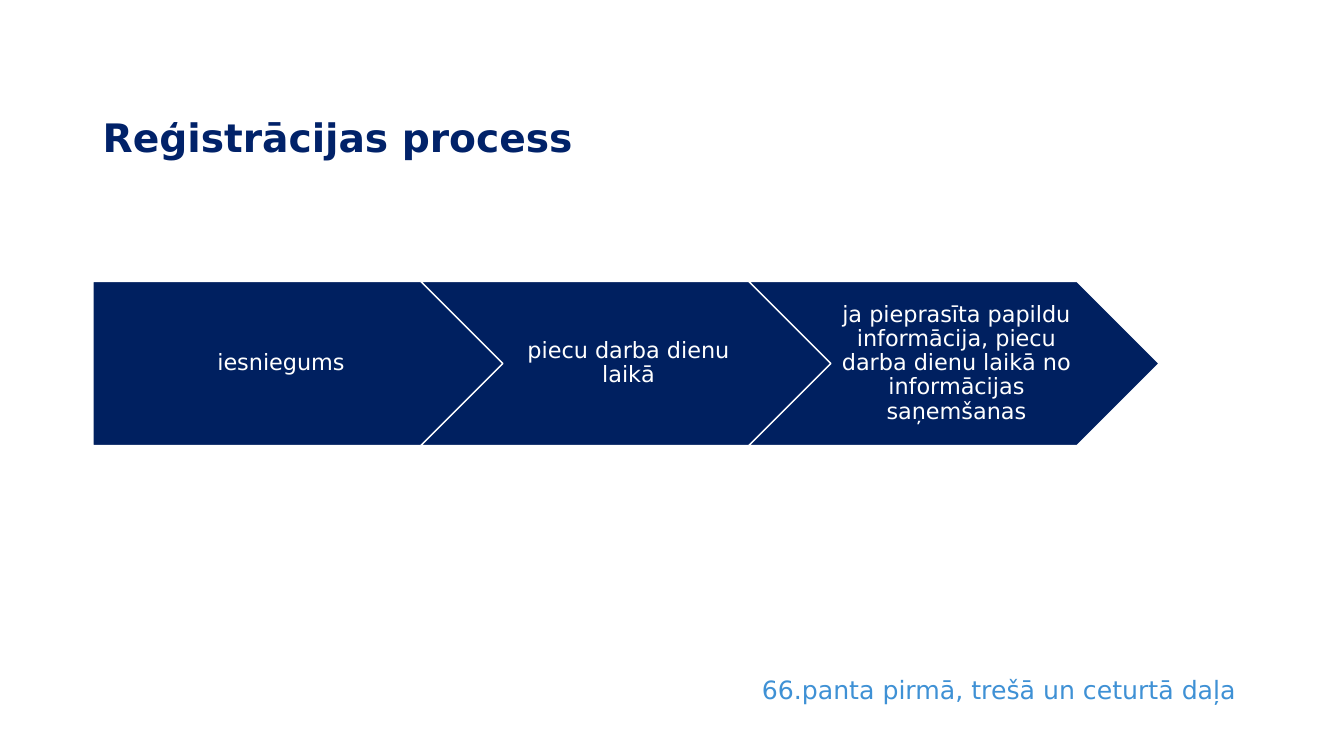
"""Build a slide with a three-step registration process."""
from pptx import Presentation
from pptx.dml.color import RGBColor as Rgb
from pptx.enum.shapes import MSO_SHAPE as Kind
from pptx.enum.text import MSO_ANCHOR as Anchor, PP_ALIGN as Align
from pptx.util import Cm, Pt

FONT = "DejaVu Sans"
COLORS = {"step": "002060", "edge": "FFFFFF", "title": "012269", "note": "3F91D5"}
STEPS = [
    "iesniegums",
    "piecu darba dienu laikā",
    "ja pieprasīta papildu informācija, piecu darba dienu laikā no informācijas saņemšanas",
]


def tint(name):
    return Rgb.from_string(COLORS[name])


def add_text(slide, box, text, size, color, bold=False, align=Align.LEFT,
             anchor=Anchor.MIDDLE, line=0.9, pads=(0.25, 0.25)):
    frame = slide.shapes.add_textbox(*map(Cm, box)).text_frame
    frame.word_wrap = True
    frame.vertical_anchor = anchor
    frame.margin_left, frame.margin_right = map(Cm, pads)
    para = frame.paragraphs[0]
    para.alignment = align
    para.line_spacing = line
    run = para.add_run()
    run.text = text
    font = run.font
    font.name, font.size, font.bold = FONT, Pt(size), bold
    font.color.rgb = tint(color)


def add_step(slide, box, text, first):
    left, top, width, height = box
    kind = Kind.PENTAGON if first else Kind.CHEVRON
    shape = slide.shapes.add_shape(kind, *map(Cm, box))
    shape.shadow.inherit = False
    shape.fill.solid()
    shape.fill.fore_color.rgb = tint("step")
    shape.line.color.rgb = tint("edge")
    shape.line.width = Pt(1)
    tip = height / 2
    if first:
        area, pad = (left, top, width - tip / 2, height), 0.23
    else:
        area, pad = (left + tip, top, width - 2 * tip, height), 0.18
    add_text(slide, area, text, 16, "edge", align=Align.CENTER, pads=(pad, 0.05))


def add_flow(slide, box, steps):
    left, top, width, height = box
    wide = 10.34
    pitch = (width - wide) / (len(steps) - 1)
    for i, text in enumerate(steps):
        add_step(slide, (left + i * pitch, top, wide, height), text, i == 0)


def main():
    deck = Presentation()
    deck.slide_width, deck.slide_height = Cm(33.87), Cm(19.05)
    slide = deck.slides.add_slide(deck.slide_layouts[6])
    add_flow(slide, (2.34, 7.09, 26.87, 4.14), STEPS)
    add_text(slide, (2.34, 2.26, 26.87, 2.51), "Reģistrācijas process",
             28, "title", bold=True)
    add_text(slide, (18.95, 16.87, 12.6, 1.02), "66.panta pirmā, trešā un ceturtā daļa",
             18, "note", anchor=Anchor.TOP, line=1.0)
    deck.save("out.pptx")


if __name__ == "__main__":
    main()
